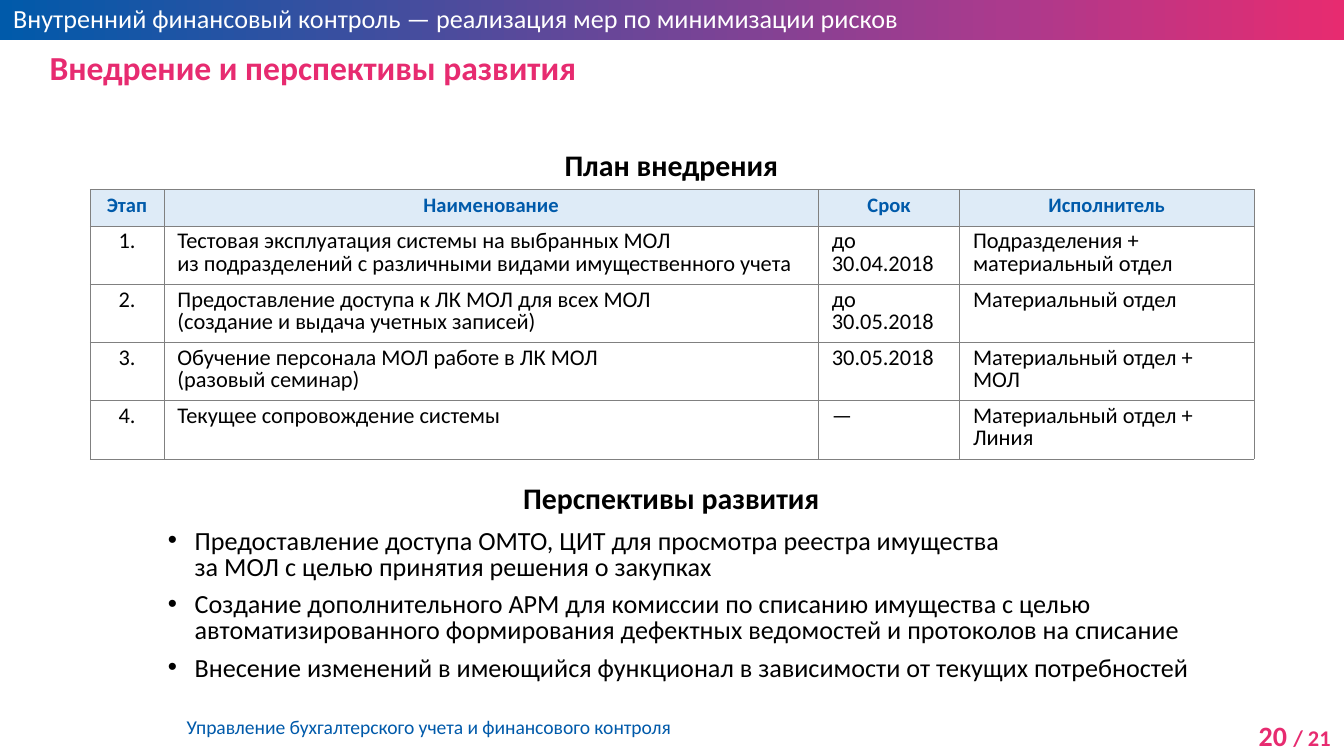
"""Build the slide on the rollout plan and outlook of financial control."""
from copy import deepcopy
from lxml import etree
from pptx import Presentation
from pptx import util as u
from pptx.dml.color import RGBColor
from pptx.enum import shapes, text
from pptx.oxml.ns import qn

INK = {"blue": "005AAA", "plum": "AB3A8D", "pink": "E72B70", "black": "000000",
       "white": "FFFFFF", "pale": "DEEBF7", "gray": "808080"}
FONT = "Calibri"
WIDE = 10
TALL = WIDE * 9 / 16
LEFT, MID, RIGHT = text.PP_ALIGN.LEFT, text.PP_ALIGN.CENTER, text.PP_ALIGN.RIGHT

BAND = [(0, "blue"), (0.75, "plum"), (1, "pink")]
LABELS = [
    ((9.1, 5.3, 0.9, 0.35), RIGHT, 1,
     [("20 ", 15, "pink", True), ("/ 21", 12, "pink", True)]),
    ((1.29, 5.27, 3.84, 0.28), LEFT, 1,
     [("Управление бухгалтерского учета и финансового контроля", 10.5, "blue", False)]),
    ((0, -0.03, WIDE, 0.34), LEFT, 1,
     [("Внутренний финансовый контроль — реализация мер по минимизации рисков",
       14, "white", False)]),
    ((0.27, 0.33, 9.45, 0.71), LEFT, 0.9,
     [("Внедрение и перспективы развития", 18, "pink", True)]),
    ((0.27, 1.04, 9.45, 0.37), MID, 1, [("План внедрения", 16, "black", True)]),
    ((0.27, 3.52, 9.45, 0.37), MID, 1, [("Перспективы развития", 16, "black", True)]),
]
HEAD = ["Этап", "Наименование", "Срок", "Исполнитель"]
STEPS = [
    ("Тестовая эксплуатация системы на выбранных МОЛ\n"
     "из подразделений с различными видами имущественного учета",
     "до 30.04.2018", "Подразделения + материальный отдел"),
    ("Предоставление доступа к ЛК МОЛ для всех МОЛ\n(создание и выдача учетных записей)",
     "до 30.05.2018", "Материальный отдел"),
    ("Обучение персонала МОЛ работе в ЛК МОЛ\n(разовый семинар)",
     "30.05.2018", "Материальный отдел + МОЛ"),
    ("Текущее сопровождение системы", "—", "Материальный отдел + Линия"),
]
WIDTHS = [0.55, 4.87, 1.05, 2.19]
HEIGHTS = [0.27] + [0.43] * len(STEPS)
GOALS = [
    "Предоставление доступа ОМТО, ЦИТ для просмотра реестра имущества\n"
    "за МОЛ с целью принятия решения о закупках",
    "Создание дополнительного АРМ для комиссии по списанию имущества с целью "
    "автоматизированного формирования дефектных ведомостей и протоколов на списание",
    "Внесение изменений в имеющийся функционал в зависимости от текущих потребностей",
]


def rgb(name):
    return RGBColor.from_string(INK[name])


def write(para, words, size, color, bold=False):
    for i, line in enumerate(words.split("\n")):
        if i:
            para.add_line_break()
        run = para.add_run()
        run.text = line
        font = run.font
        font.name, font.size, font.bold = FONT, u.Pt(size), bold
        font.color.rgb = rgb(color)


def add_box(slide, area):
    frame = slide.shapes.add_textbox(*map(u.Inches, area)).text_frame
    frame.word_wrap = True
    return frame


def add_band(slide):
    area = (0, 0, WIDE, 0.3)
    band = slide.shapes.add_shape(shapes.MSO_SHAPE.RECTANGLE, *map(u.Inches, area))
    band.shadow.inherit = False
    band.line.fill.background()
    band.fill.gradient()
    band.fill.gradient_angle = 0
    stops = band.element.spPr.find(".//" + qn("a:gsLst"))
    stops.insert(1, deepcopy(stops[0]))
    for stop, (place, color) in zip(band.fill.gradient_stops, BAND):
        stop.position = place
        stop.color.rgb = rgb(color)


def add_edges(cell):
    props = cell._tc.get_or_add_tcPr()
    for side in ("lnL", "lnR", "lnT", "lnB"):
        edge = etree.SubElement(props, qn("a:" + side), w=str(u.Pt(0.25)))
        fill = etree.SubElement(edge, qn("a:solidFill"))
        etree.SubElement(fill, qn("a:srgbClr"), val=INK["gray"])


def add_plan(slide):
    rows = [HEAD] + [(f"{n}.", *step) for n, step in enumerate(STEPS, 1)]
    area = (0.67, 1.41, sum(WIDTHS), sum(HEIGHTS))
    table = slide.shapes.add_table(len(rows), len(HEAD), *map(u.Inches, area)).table
    table.horz_banding = table.first_row = False
    for col, width in zip(table.columns, WIDTHS):
        col.width = u.Inches(width)
    for r, row in enumerate(rows):
        table.rows[r].height = u.Inches(HEIGHTS[r])
        for c, words in enumerate(row):
            cell = table.cell(r, c)
            add_edges(cell)
            para = cell.text_frame.paragraphs[0]
            para.line_spacing = u.Pt(12)
            para.alignment = MID if r == 0 or c == 0 else LEFT
            if r == 0:
                cell.fill.solid()
                cell.fill.fore_color.rgb = rgb("pale")
                write(para, words, 11, "blue", True)
            else:
                cell.fill.background()
                write(para, words, 12, "black")


def add_goals(slide):
    frame = add_box(slide, (1.15, 3.89, 8.18, 1.28))
    for i, goal in enumerate(GOALS):
        para = frame.add_paragraph() if i else frame.paragraphs[0]
        para.line_spacing = u.Pt(14)
        para.space_before = u.Pt(6 if i else 0)
        props = para._p.get_or_add_pPr()
        props.set("marL", str(u.Inches(0.2)))
        props.set("indent", str(-u.Inches(0.2)))
        etree.SubElement(props, qn("a:buFont"), typeface="Arial")
        etree.SubElement(props, qn("a:buChar"), char="•")
        write(para, goal, 14, "black")


def main():
    deck = Presentation()
    deck.slide_width, deck.slide_height = u.Inches(WIDE), u.Inches(TALL)
    slide = deck.slides.add_slide(deck.slide_layouts[6])
    add_band(slide)
    for area, align, gap, runs in LABELS:
        para = add_box(slide, area).paragraphs[0]
        para.alignment = align
        para.line_spacing = gap
        for run in runs:
            write(para, *run)
    add_plan(slide)
    add_goals(slide)
    deck.save("out.pptx")


if __name__ == "__main__":
    main()
